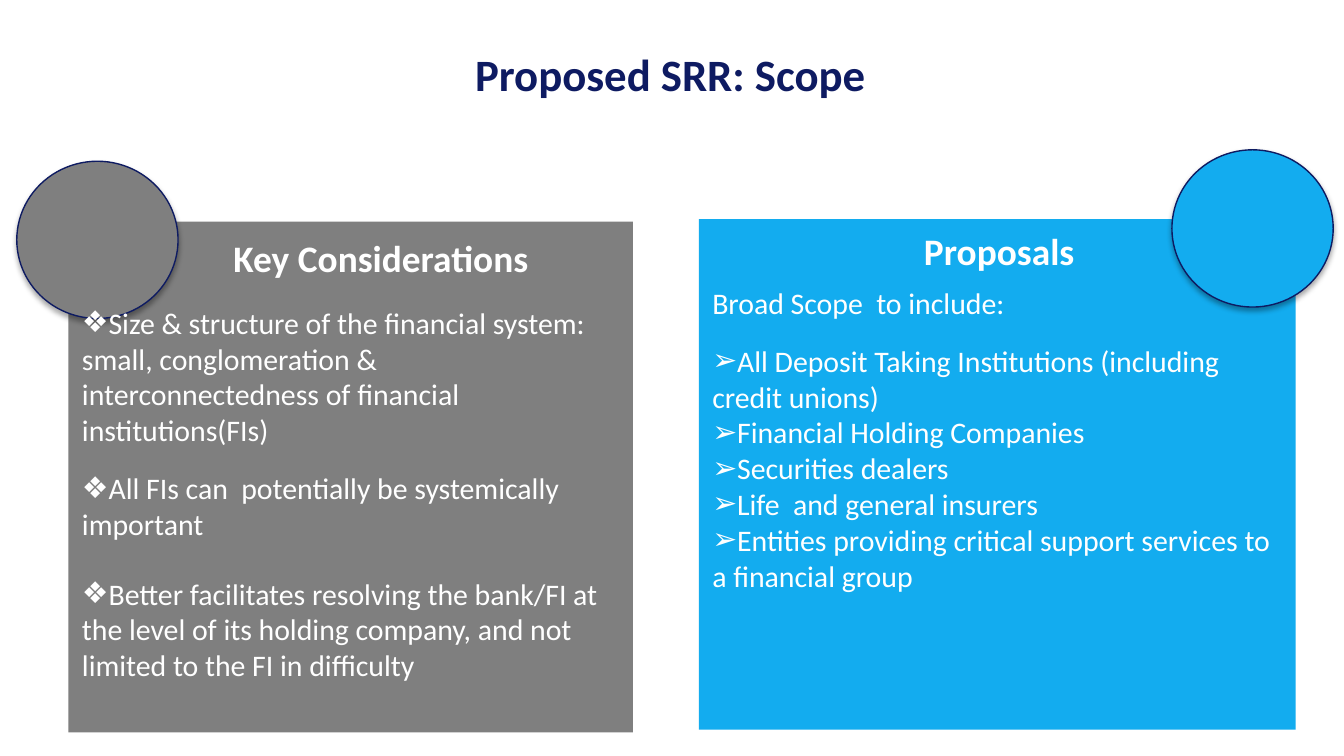
from dataclasses import dataclass

from lxml import etree
from pptx import Presentation
from pptx.dml.color import RGBColor
from pptx.enum.shapes import MSO_SHAPE
from pptx.enum.text import MSO_ANCHOR, MSO_AUTO_SIZE, PP_ALIGN
from pptx.oxml import parse_xml
from pptx.oxml.ns import nsdecls, qn
from pptx.util import Emu, Pt

RECT, OVAL = MSO_SHAPE.RECTANGLE, MSO_SHAPE.OVAL
TOP, NO_FIT = MSO_ANCHOR.TOP, MSO_AUTO_SIZE.NONE
LEFT, CENTER = PP_ALIGN.LEFT, PP_ALIGN.CENTER
SCALE = 4572


@dataclass(frozen=True)
class Theme:
    navy: RGBColor = RGBColor(0x0E, 0x1B, 0x62)
    gray: RGBColor = RGBColor(0x7F, 0x7F, 0x7F)
    blue: RGBColor = RGBColor(0x13, 0xAC, 0xEF)
    white: RGBColor = RGBColor(0xFF, 0xFF, 0xFF)
    font: str = "Calibri"
    title: int = 24
    heading: int = 20
    body: int = 16
    leading: float = 19.2


THEME = Theme()


def px(*values):
    return [Emu(v * SCALE) for v in values]


def write(tf, text, size=THEME.body, color=THEME.white, bold=False,
          align=LEFT, before=0, after=0, bullet=None):
    tf.word_wrap = True
    tf.auto_size = NO_FIT
    tf.vertical_anchor = TOP
    p = tf.add_paragraph() if tf.text else tf.paragraphs[0]
    p.alignment = align
    p.space_before, p.space_after = Pt(before), Pt(after)
    pPr = p._p.get_or_add_pPr()
    pPr.set("marL", "0")
    pPr.set("indent", "0")
    if bullet:
        p.line_spacing = Pt(THEME.leading)
        etree.SubElement(pPr, qn("a:buChar")).set("char", bullet)
    else:
        etree.SubElement(pPr, qn("a:buNone"))
    r = p.add_run()
    r.text = text
    r.font.name, r.font.size, r.font.bold = THEME.font, Pt(size), bold
    r.font.color.rgb = color


prs = Presentation()
prs.slide_width, prs.slide_height = px(2000, 1125)
s = prs.slides.add_slide(prs.slide_layouts[3])
title, considerations, proposals = list(s.placeholders)[:3]

title.left, title.top, title.width, title.height = px(22, 60, 1966, 100)
write(title.text_frame, "Proposed SRR: Scope ", size=THEME.title,
      color=THEME.navy, bold=True, align=CENTER)

panel = s.shapes.add_shape(RECT, *px(102, 330, 840, 760))
panel.shadow.inherit = False
panel.fill.solid()
panel.fill.fore_color.rgb = THEME.gray
panel.line.fill.background()

proposals.left, proposals.top, proposals.width, proposals.height = px(1040, 326, 888, 760)
proposals.fill.solid()
proposals.fill.fore_color.rgb = THEME.blue
tf = proposals.text_frame
tf.margin_top = px(97)[0]
write(tf, "Broad Scope  to include:", after=12)
for text in (
    "All Deposit Taking Institutions (including credit unions)",
    "Financial Holding Companies",
    "Securities dealers",
    "Life  and general insurers",
    "Entities providing critical support services to a financial group",
):
    write(tf, text, bullet="➢")

for x, y, color in ((25, 240, THEME.gray), (1744, 223, THEME.blue)):
    sp = s.shapes.add_shape(OVAL, *px(x, y, 240, 234))
    sp.fill.solid()
    sp.fill.fore_color.rgb = color
    sp.line.color.rgb = THEME.navy
    sp.line.width = Pt(0.75)
    sp._element.spPr.append(parse_xml(
        f'<a:effectLst {nsdecls("a")}>'
        f'<a:outerShdw blurRad="{Pt(3.1)}" dist="{Pt(1.8)}" dir="5400000" rotWithShape="0">'
        '<a:srgbClr val="000000"><a:alpha val="35000"/></a:srgbClr>'
        '</a:outerShdw></a:effectLst>'))

s.shapes._spTree.append(considerations._element)
considerations.left, considerations.top, considerations.width, considerations.height = px(102, 443, 820, 647)
for text, before in (
    ("Size & structure of the financial system: small, conglomeration & "
     "interconnectedness of financial institutions(FIs)", 0),
    ("All FIs can  potentially be systemically important", 0),
    ("Better facilitates resolving the bank/FI at the level of its holding "
     "company, and not limited to the FI in difficulty", 6),
):
    write(considerations.text_frame, text, before=before, after=12, bullet="❖")

for text, x, y, w in (("Key Considerations", 210, 340, 714), ("Proposals", 1067, 330, 840)):
    sp = s.shapes.add_textbox(*px(x, y, w, 88))
    write(sp.text_frame, text, size=THEME.heading, bold=True, align=CENTER)

for sp in list(s.placeholders):
    if not sp.text_frame.text:
        sp._element.getparent().remove(sp._element)

prs.save("out.pptx")
